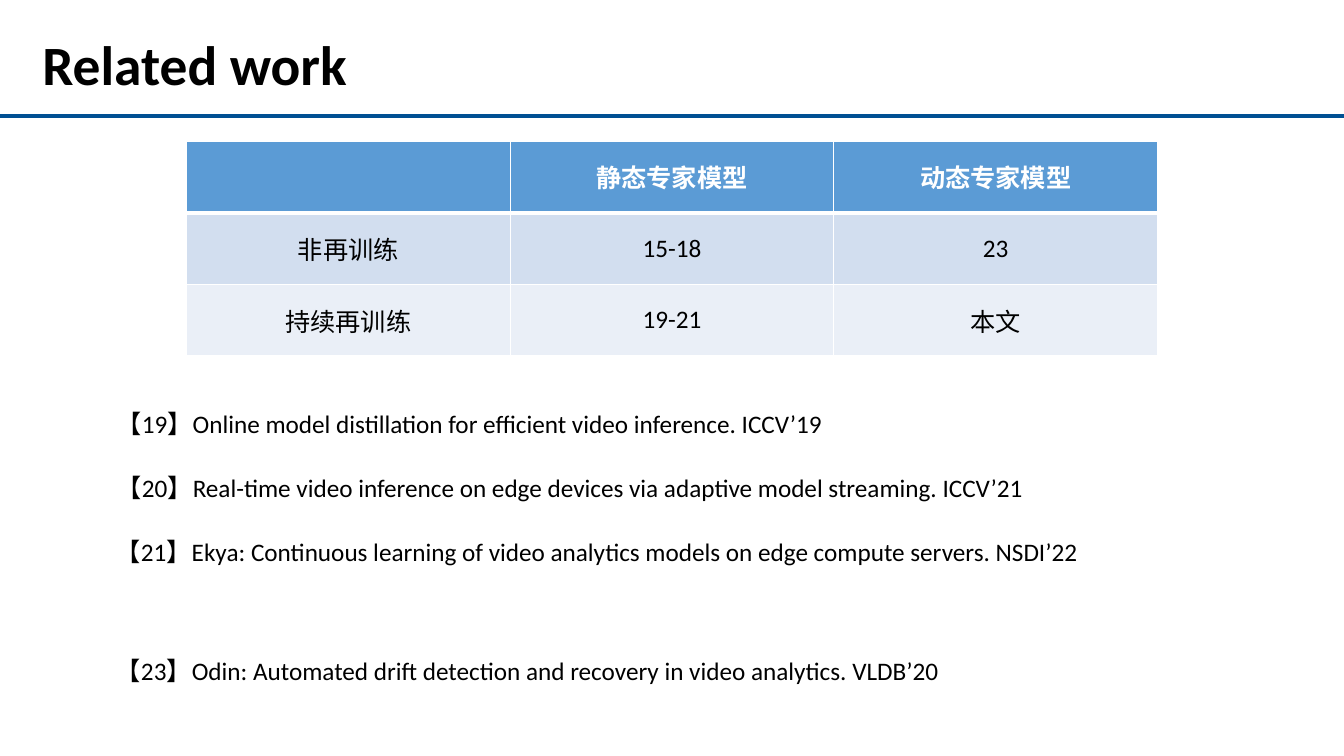
"""Build the related-work slide: a table of approaches above a list of references."""
from dataclasses import dataclass

from lxml.etree import SubElement
from pptx import Presentation
from pptx.dml.color import RGBColor
from pptx.enum.shapes import MSO_CONNECTOR
from pptx.enum.text import MSO_ANCHOR, MSO_AUTO_SIZE, PP_ALIGN
from pptx.oxml.ns import qn
from pptx.slide import Slide
from pptx.table import _Cell as Cell
from pptx.text.text import _Paragraph as Paragraph
from pptx.util import Inches, Pt


@dataclass(frozen=True)
class Theme:
    font: str = "Calibri"
    title_size: float = 39.6
    body_size: float = 18
    text: str = "000000"
    white: str = "FFFFFF"
    rule: str = "005093"
    row_fills: tuple[str, ...] = ("5B9BD5", "D2DEEF", "EAEFF7")
    thin: float = 1
    thick: float = 3


@dataclass(frozen=True)
class Reference:
    number: int
    citation: str
    left: float
    top: float
    width: float


THEME = Theme()
SLIDE_W, SLIDE_H = 13.33, 7.5
RULE_TOP = 1.15
COL_W, ROW_H = 3.21, 0.71

APPROACHES = (
    ("", "静态专家模型", "动态专家模型"),
    ("非再训练", "15-18", "23"),
    ("持续再训练", "19-21", "本文"),
)

REFERENCES = (
    Reference(19, "Online model distillation for efficient video inference. ICCV’19", 1.06, 4, 11.37),
    Reference(20, "Real-time video inference on edge devices via adaptive model streaming. ICCV’21",
              1.06, 4.64, 9.28),
    Reference(21, "Ekya: Continuous learning of video analytics models on edge compute servers. NSDI’22",
              1.05, 5.27, 10.43),
    Reference(23, "Odin: Automated drift detection and recovery in video analytics. VLDB’20",
              1.05, 6.45, 8.92),
)


def add_run(p: Paragraph, text: str, size: float, color: str, bold: bool = False) -> None:
    r = p.add_run()
    r.text = text
    r.font.name = THEME.font
    r.font.size = Pt(size)
    r.font.bold = bold
    r.font.color.rgb = RGBColor.from_string(color)


def add_title(s: Slide, text: str) -> None:
    sp = s.shapes.title
    sp.left, sp.top, sp.width, sp.height = map(Inches, (0.32, 0.27, 12.7, 0.81))
    tf = sp.text_frame
    tf.auto_size = MSO_AUTO_SIZE.NONE
    tf.vertical_anchor = MSO_ANCHOR.MIDDLE
    p = tf.paragraphs[0]
    p.alignment = PP_ALIGN.LEFT
    p.line_spacing = 0.9
    add_run(p, text, THEME.title_size, THEME.text, bold=True)


def add_rule(s: Slide) -> None:
    line = s.shapes.add_connector(MSO_CONNECTOR.STRAIGHT, Inches(0), Inches(RULE_TOP),
                                  Inches(SLIDE_W), Inches(RULE_TOP))
    line.line.color.rgb = RGBColor.from_string(THEME.rule)
    line.line.width = Pt(THEME.thick)
    SubElement(line._element.spPr, qn("a:effectLst"))


def set_borders(cell: Cell, top: float, bottom: float) -> None:
    tc_pr = cell._tc.get_or_add_tcPr()
    for side, width in (("L", THEME.thin), ("R", THEME.thin), ("T", top), ("B", bottom)):
        ln = SubElement(tc_pr, qn(f"a:ln{side}"), w=str(Pt(width)))
        fill = SubElement(ln, qn("a:solidFill"))
        SubElement(fill, qn("a:srgbClr"), val=THEME.white)


def add_approach_table(s: Slide) -> None:
    n_rows, n_cols = len(APPROACHES), len(APPROACHES[0])
    table = s.shapes.add_table(n_rows, n_cols, Inches(1.85), Inches(1.4),
                               Inches(n_cols * COL_W), Inches(n_rows * ROW_H)).table
    for col in table.columns:
        col.width = Inches(COL_W)
    for i, row in enumerate(APPROACHES):
        table.rows[i].height = Inches(ROW_H)
        header = i == 0
        for j, text in enumerate(row):
            cell = table.cell(i, j)
            set_borders(cell, THEME.thick if i == 1 else THEME.thin,
                        THEME.thick if header else THEME.thin)
            cell.fill.solid()
            cell.fill.fore_color.rgb = RGBColor.from_string(THEME.row_fills[i])
            cell.vertical_anchor = MSO_ANCHOR.MIDDLE
            if text:
                p = cell.text_frame.paragraphs[0]
                p.alignment = PP_ALIGN.CENTER
                add_run(p, text, THEME.body_size, THEME.white if header else THEME.text, header)


def add_reference(s: Slide, ref: Reference) -> None:
    sp = s.shapes.add_textbox(Inches(ref.left), Inches(ref.top), Inches(ref.width), Inches(0.4))
    tf = sp.text_frame
    tf.word_wrap = True
    tf.auto_size = MSO_AUTO_SIZE.SHAPE_TO_FIT_TEXT
    add_run(tf.paragraphs[0], f"【{ref.number}】{ref.citation}", THEME.body_size, THEME.text)


def main() -> None:
    prs = Presentation()
    prs.slide_width, prs.slide_height = Inches(SLIDE_W), Inches(SLIDE_H)
    s = prs.slides.add_slide(prs.slide_layouts[5])
    add_rule(s)
    add_title(s, "Related work")
    add_approach_table(s)
    for ref in REFERENCES:
        add_reference(s, ref)
    prs.save("out.pptx")


if __name__ == "__main__":
    main()
